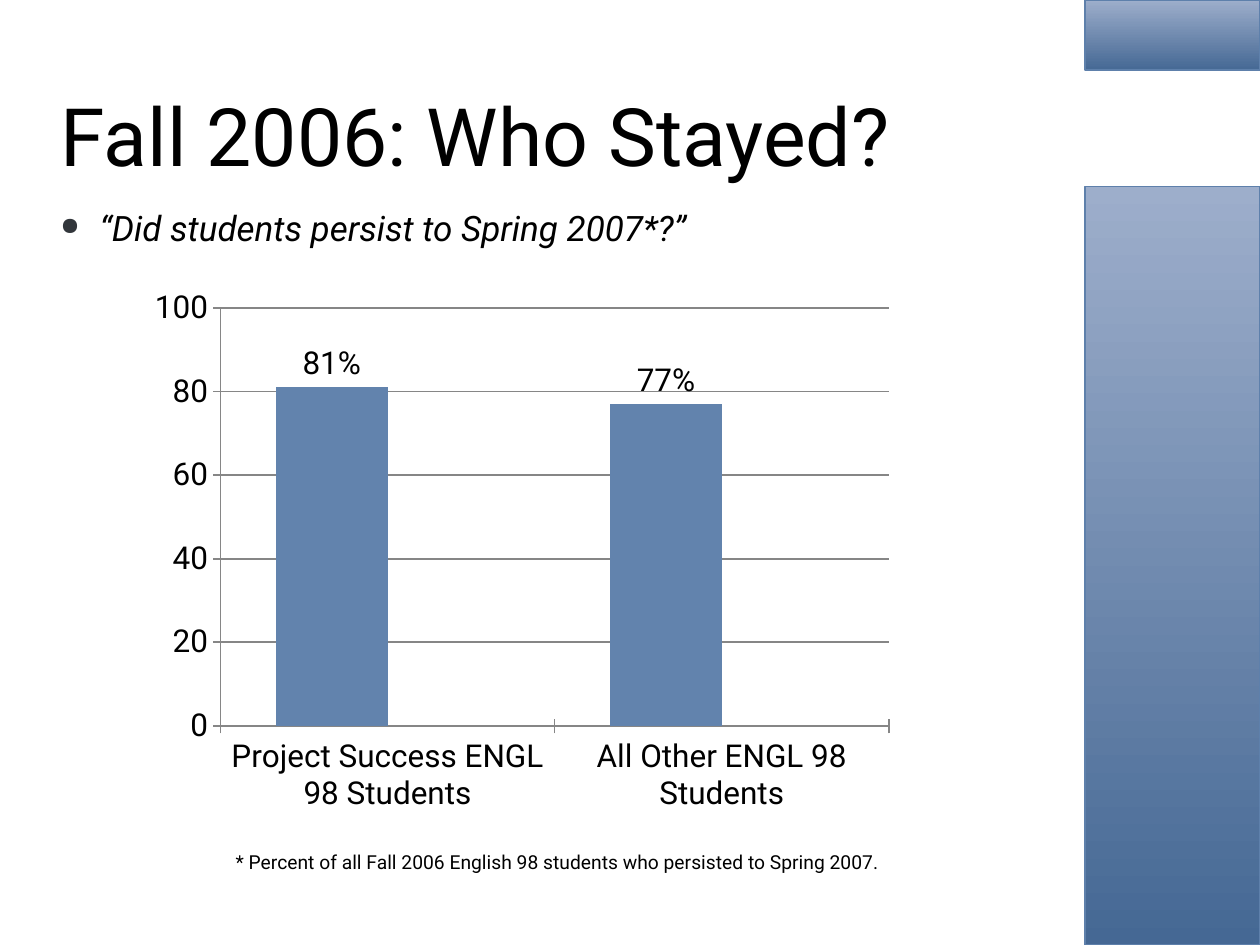
from dataclasses import dataclass

from lxml.etree import SubElement
from pptx import Presentation
from pptx.chart.data import CategoryChartData
from pptx.dml.color import RGBColor
from pptx.enum.chart import XL_CHART_TYPE, XL_LABEL_POSITION, XL_TICK_MARK
from pptx.enum.shapes import MSO_SHAPE
from pptx.enum.text import MSO_ANCHOR, MSO_AUTO_SIZE, PP_ALIGN
from pptx.oxml.ns import qn
from pptx.util import Cm, Pt


@dataclass(frozen=True)
class Theme:
    font: str = "Roboto"
    text: RGBColor = RGBColor(0x00, 0x00, 0x00)
    bullet: str = "32363B"
    band_dark: RGBColor = RGBColor(0x45, 0x68, 0x94)
    band_light: RGBColor = RGBColor(0x9D, 0xAE, 0xCB)
    band_line: RGBColor = RGBColor(0x5E, 0x80, 0xAB)
    series: tuple = (RGBColor(0x62, 0x83, 0xAD), RGBColor(0x32, 0x49, 0x66))
    axis: RGBColor = RGBColor(0x86, 0x86, 0x86)
    title_size: int = 46
    body_size: int = 20
    chart_size: int = 18
    note_size: int = 11


THEME = Theme()


def format_font(font, size, italic=False):
    font.name = THEME.font
    font.size = Pt(size)
    font.italic = italic
    font.color.rgb = THEME.text


def write_text(shape, text, *, size, italic=False, bullet=None,
               anchor=MSO_ANCHOR.TOP, margin_top=Cm(0.13)):
    frame = shape.text_frame
    frame.word_wrap = True
    frame.auto_size = MSO_AUTO_SIZE.NONE
    frame.vertical_anchor = anchor
    frame.margin_top = margin_top
    paragraph = frame.paragraphs[0]
    paragraph.alignment = PP_ALIGN.LEFT
    if bullet:
        add_bullet(paragraph, bullet)
    run = paragraph.add_run()
    run.text = text
    format_font(run.font, size, italic)


def add_bullet(paragraph, character):
    properties = paragraph._p.get_or_add_pPr()
    indent = Cm(0.79)
    properties.set("marL", str(indent))
    properties.set("indent", str(-indent))
    color = SubElement(properties, qn("a:buClr"))
    SubElement(color, qn("a:srgbClr"), val=THEME.bullet)
    SubElement(properties, qn("a:buSzPct"), val="70000")
    SubElement(properties, qn("a:buChar"), char=character)


def place_title(slide, text, left, top, width, height):
    title = slide.shapes.title
    title.left, title.top, title.width, title.height = left, top, width, height
    write_text(title, text, size=THEME.title_size, anchor=MSO_ANCHOR.MIDDLE)


def add_text(slide, text, left, top, width, height, **text_format):
    box = slide.shapes.add_textbox(left, top, width, height)
    write_text(box, text, **text_format)


def add_side_bands(slide, left, width, height):
    """Draw a short band at the top and a long one down to the bottom."""
    lower_top = Cm(3.76)
    for top, band_height in ((lower_top, height - lower_top), (0, Cm(1.42))):
        band = slide.shapes.add_shape(
            MSO_SHAPE.RECTANGLE, left, top, width, band_height)
        band.shadow.inherit = False
        band.fill.gradient()
        band.fill.gradient_angle = 90
        colors = (THEME.band_dark, THEME.band_light)
        for stop, color in zip(band.fill.gradient_stops, colors):
            stop.color.rgb = color
        band.line.color.rgb = THEME.band_line
        band.line.width = Pt(1)


def set_plot_layout(chart, **fractions):
    """Fix the inner plot area as fractions of the chart's box."""
    plot_area = chart._chartSpace.chart.plotArea
    layout = plot_area.find(qn("c:layout"))
    if layout is None:
        layout = SubElement(plot_area, qn("c:layout"))
        plot_area.insert(0, layout)
    manual = SubElement(layout, qn("c:manualLayout"))
    SubElement(manual, qn("c:layoutTarget"), val="inner")
    for name in ("xMode", "yMode"):
        SubElement(manual, qn(f"c:{name}"), val="edge")
    for name, fraction in fractions.items():
        SubElement(manual, qn(f"c:{name}"), val=str(fraction))


def format_axis_line(line):
    line.color.rgb = THEME.axis
    line.width = Pt(1)


def add_persistence_chart(slide, left, top, width, height):
    data = CategoryChartData(number_format="0")
    data.categories = ["Project Success ENGL 98 Students",
                       "All Other ENGL 98 Students"]
    data.add_series("Series 1", (81, 77))
    data.add_series("Series 2", (None, None))
    chart = slide.shapes.add_chart(
        XL_CHART_TYPE.COLUMN_CLUSTERED, left, top, width, height, data).chart
    chart.has_title = False
    chart.has_legend = False
    format_font(chart.font, THEME.chart_size)
    set_plot_layout(chart, x=0.11, y=0.05, w=0.87, h=0.77)

    plot = chart.plots[0]
    plot.gap_width = 100
    plot.overlap = 0
    plot.vary_by_categories = False
    plot.has_data_labels = True
    labels = plot.data_labels
    labels.show_value = True
    labels.number_format = '0"%"'
    labels.number_format_is_linked = False
    labels.position = XL_LABEL_POSITION.OUTSIDE_END
    format_font(labels.font, THEME.chart_size)
    for series, color in zip(plot.series, THEME.series):
        series.format.fill.solid()
        series.format.fill.fore_color.rgb = color

    for axis in (chart.category_axis, chart.value_axis):
        axis.major_tick_mark = XL_TICK_MARK.CROSS
        axis.minor_tick_mark = XL_TICK_MARK.NONE
        format_axis_line(axis.format.line)
    value_axis = chart.value_axis
    value_axis.minimum_scale = 0
    value_axis.maximum_scale = 100
    value_axis.major_unit = 20
    value_axis.has_major_gridlines = True
    format_axis_line(value_axis.major_gridlines.format.line)


def build_slide(presentation):
    slide = presentation.slides.add_slide(presentation.slide_layouts[5])
    left, width = Cm(0.97), Cm(19.69)
    band_left = Cm(21.87)
    place_title(slide, "Fall 2006: Who Stayed?", left, Cm(1.35), width, Cm(2.72))
    add_text(slide, "“Did students persist to Spring 2007*?”",
             left, Cm(3.3), width, Cm(13.72), size=THEME.body_size,
             italic=True, bullet="●", margin_top=Cm(0.86))
    add_side_bands(slide, band_left, presentation.slide_width - band_left,
                   presentation.slide_height)
    add_persistence_chart(slide, Cm(2.74), Cm(5.66), Cm(15.49), Cm(10.95))
    add_text(slide, "* Percent of all Fall 2006 English 98 students who "
             "persisted to Spring 2007.", Cm(4.5), Cm(17.02), Cm(13.74),
             Cm(0.74), size=THEME.note_size)


def main():
    presentation = Presentation()
    presentation.slide_width = Cm(25.4)
    presentation.slide_height = Cm(19.05)
    build_slide(presentation)
    presentation.save("out.pptx")


if __name__ == "__main__":
    main()
